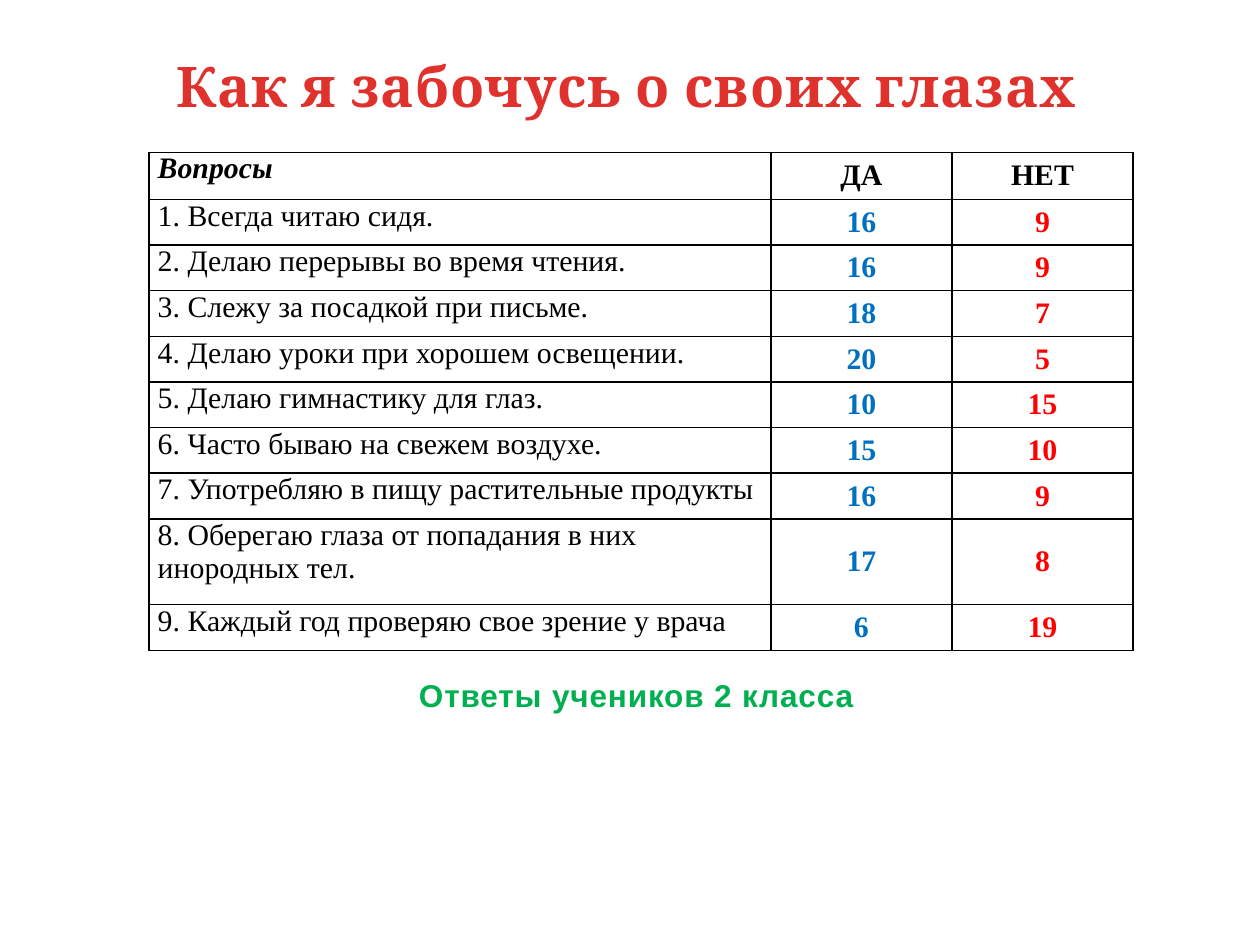
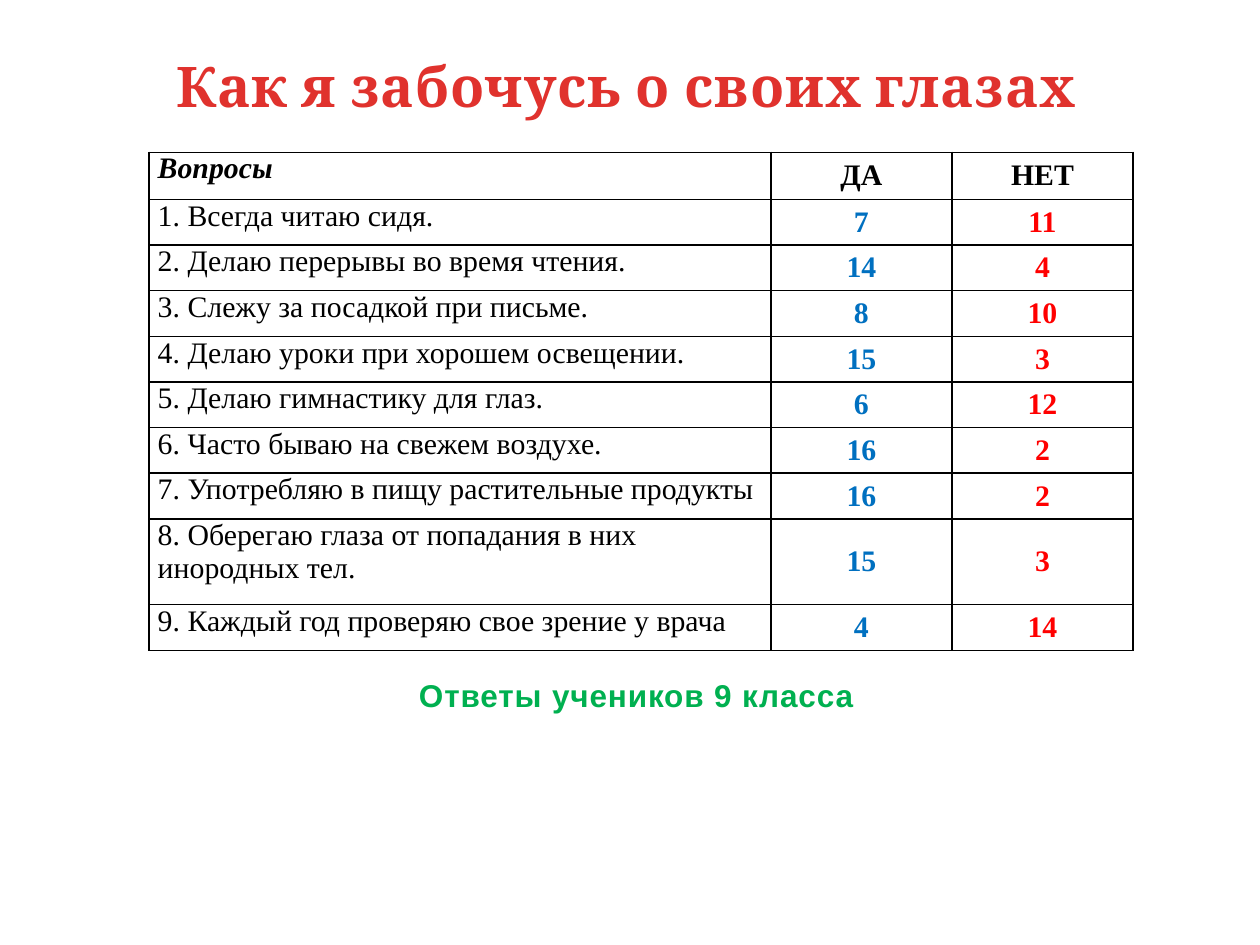
import dataclasses

import lxml.etree
import pptx
import pptx.dml.color
import pptx.enum.text
import pptx.oxml.ns
import pptx.slide
import pptx.table
import pptx.text.text
import pptx.util

Cm = pptx.util.Cm
Pt = pptx.util.Pt
RGBColor = pptx.dml.color.RGBColor
CENTER = pptx.enum.text.PP_ALIGN.CENTER
MIDDLE = pptx.enum.text.MSO_ANCHOR.MIDDLE

BLACK = RGBColor(0x00, 0x00, 0x00)
YES_BLUE = RGBColor(0x00, 0x70, 0xC0)
NO_RED = RGBColor(0xFF, 0x00, 0x00)
CAPTION_GREEN = RGBColor(0x00, 0xB0, 0x50)
TITLE_RED = RGBColor(0xE0, 0x32, 0x2D)
TITLE_DARK_RED = RGBColor(0xA2, 0x20, 0x1C)

TITLE = "Как я забочусь о своих глазах"
HEADERS = ("Вопросы", "ДА", "НЕТ")
QUESTIONS = (
    "1. Всегда читаю сидя.",
    "2. Делаю перерывы во время чтения.",
    "3. Слежу за посадкой при письме.",
    "4. Делаю уроки при хорошем освещении.",
    "5. Делаю гимнастику для глаз.",
    "6. Часто бываю на свежем воздухе.",
    "7. Употребляю в пищу растительные продукты",
    "8. Оберегаю глаза от попадания в них инородных тел.",
    "9. Каждый год проверяю свое зрение у врача",
)
COLUMN_WIDTHS = (Cm(12.54), Cm(3.65), Cm(3.65))
COLUMN_COLORS = (BLACK, YES_BLUE, NO_RED)
HEADER_HEIGHT = Cm(0.95)
ROW_HEIGHT = Cm(0.92)
TALL_ROW_HEIGHT = Cm(1.73)
TWO_LINE_QUESTION = 7
BANNER_WIDTH = Cm(19.46)


@dataclasses.dataclass(frozen=True)
class Survey:
    grade: int
    yes: tuple[int, ...]
    no: tuple[int, ...]


@dataclasses.dataclass(frozen=True)
class Banner:
    left: float
    top: float
    height: float
    font_name: str
    size: int
    color: RGBColor


TITLE_BANNER = Banner(2.9, 0.91, 1.63, "Cambria", 32, TITLE_RED)
CAPTION_BANNER = Banner(3.1, 13.51, 1.02, "Arial", 18, CAPTION_GREEN)

SURVEYS = (
    Survey(2, (16, 16, 18, 20, 10, 15, 16, 17, 6), (9, 9, 7, 5, 15, 10, 9, 8, 19)),
    Survey(9, (7, 14, 8, 15, 6, 16, 16, 15, 4), (11, 4, 10, 3, 12, 2, 2, 3, 14)),
)


def add_banner(page: pptx.slide.Slide, style: Banner, text: str) -> pptx.text.text._Run:
    box = page.shapes.add_textbox(Cm(style.left), Cm(style.top), BANNER_WIDTH, Cm(style.height))
    box.text_frame.word_wrap = True
    para = box.text_frame.paragraphs[0]
    para.alignment = CENTER
    span = para.add_run()
    span.text = text
    para.font.name = style.font_name
    para.font.size = Pt(style.size)
    para.font.bold = True
    para.font.color.rgb = style.color
    span.font._element.set("spc", "50")
    return span


def add_title(page: pptx.slide.Slide) -> None:
    fill = add_banner(page, TITLE_BANNER, TITLE).font.fill
    fill.gradient()
    fill.gradient_angle = 270
    stops = ((0.25, TITLE_RED), (1.0, TITLE_DARK_RED))
    for stop, (position, color) in zip(fill.gradient_stops, stops):
        stop.position = position
        stop.color.rgb = color


def add_borders(cell: pptx.table._Cell) -> None:
    properties = cell._tc.get_or_add_tcPr()
    for side in ("a:lnL", "a:lnR", "a:lnT", "a:lnB"):
        line = lxml.etree.SubElement(properties, pptx.oxml.ns.qn(side), w=str(Pt(1)))
        solid = lxml.etree.SubElement(line, pptx.oxml.ns.qn("a:solidFill"))
        lxml.etree.SubElement(solid, pptx.oxml.ns.qn("a:srgbClr"), val=str(BLACK))


def fill_cell(cell: pptx.table._Cell, text: str, row: int, column: int) -> None:
    is_header = row == 0
    is_question = column == 0
    add_borders(cell)
    cell.fill.background()
    cell.margin_left = cell.margin_right = Cm(0.18)
    cell.margin_top = cell.margin_bottom = 0
    cell.text = text
    para = cell.text_frame.paragraphs[0]
    if not is_question:
        cell.vertical_anchor = MIDDLE
        para.alignment = CENTER
    para.font.name = "Times New Roman"
    para.font.size = Pt(17)
    para.font.bold = is_header or not is_question
    para.font.italic = is_header and is_question
    para.font.color.rgb = BLACK if is_header else COLUMN_COLORS[column]


def add_answers(page: pptx.slide.Slide, survey: Survey) -> None:
    rows = [HEADERS, *zip(QUESTIONS, survey.yes, survey.no)]
    heights = [HEADER_HEIGHT] + [ROW_HEIGHT] * len(QUESTIONS)
    heights[TWO_LINE_QUESTION + 1] = TALL_ROW_HEIGHT
    table = page.shapes.add_table(
        len(rows), len(HEADERS), Cm(3), Cm(3.07), sum(COLUMN_WIDTHS), sum(heights)
    ).table
    table.first_row = False
    table.horz_banding = False
    for column, width in zip(table.columns, COLUMN_WIDTHS):
        column.width = width
    for row, (values, height) in enumerate(zip(rows, heights)):
        table.rows[row].height = height
        for column, value in enumerate(values):
            fill_cell(table.cell(row, column), str(value), row, column)


def main() -> None:
    deck = pptx.Presentation()
    deck.slide_width = Cm(25.4)
    deck.slide_height = Cm(19.05)
    for survey in SURVEYS:
        page = deck.slides.add_slide(deck.slide_layouts[6])
        add_answers(page, survey)
        add_title(page)
        add_banner(page, CAPTION_BANNER, f"Ответы учеников {survey.grade} класса")
    deck.save("out.pptx")


if __name__ == "__main__":
    main()
